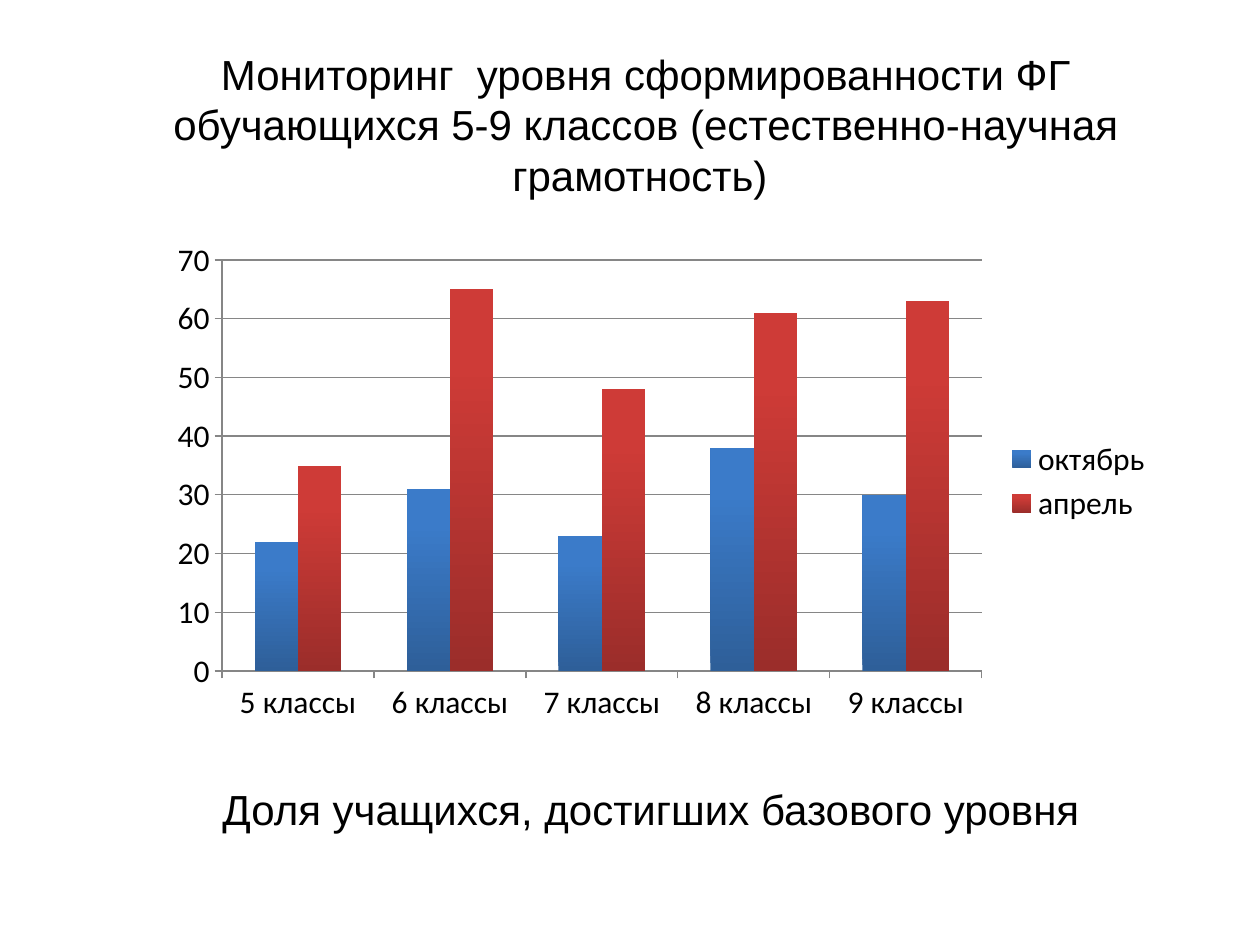
import dataclasses

import pptx
import pptx.chart.data
import pptx.dml.color
import pptx.enum.chart
import pptx.enum.text
import pptx.util

Pt = pptx.util.Pt
RGB = pptx.dml.color.RGBColor
BLACK = RGB(0, 0, 0)
GRAY = RGB(0x86, 0x86, 0x86)
BLUE, NAVY = RGB(0x3B, 0x7B, 0xC9), RGB(0x2E, 0x5F, 0x99)
RED, WINE = RGB(0xCE, 0x3B, 0x37), RGB(0x9B, 0x2D, 0x2A)


@dataclasses.dataclass
class Series:
    name: str
    values: tuple[int, ...]
    light: RGB
    dark: RGB


GRADES = [f"{grade} классы" for grade in range(5, 10)]
MONTHS = [
    Series("октябрь", (22, 31, 23, 38, 30), BLUE, NAVY),
    Series("апрель", (35, 65, 48, 61, 63), RED, WINE),
]


def place(shape, left: float, top: float, width: float, height: float) -> None:
    shape.left, shape.top = Pt(left), Pt(top)
    shape.width, shape.height = Pt(width), Pt(height)


def write(shape, text: str, *, size: float = 24, font: str = "Arial",
          color: RGB = BLACK) -> None:
    frame = shape.text_frame
    frame.word_wrap = True
    frame.auto_size = pptx.enum.text.MSO_AUTO_SIZE.NONE
    frame.vertical_anchor = pptx.enum.text.MSO_ANCHOR.TOP
    para = frame.paragraphs[0]
    para.alignment = pptx.enum.text.PP_ALIGN.CENTER
    run = para.add_run()
    run.text = text
    run.font.size, run.font.name = Pt(size), font
    run.font.color.rgb = color


def shade(fill, light: RGB, dark: RGB) -> None:
    """Fill with a gradient that runs from dark at the foot to light."""
    fill.gradient()
    fill.gradient_angle = 90
    for stop, color, pos in zip(fill.gradient_stops, (dark, light), (0, 0.8)):
        stop.color.rgb, stop.position = color, pos


def draw_chart(slide, months: list[Series]) -> None:
    kinds = pptx.enum.chart
    data = pptx.chart.data.CategoryChartData()
    data.categories = GRADES
    for month in months:
        data.add_series(month.name, month.values)
    chart = slide.shapes.add_chart(
        kinds.XL_CHART_TYPE.COLUMN_CLUSTERED,
        Pt(90), Pt(132), Pt(576), Pt(286), data).chart
    chart.has_title = False
    chart.font.size, chart.font.name = Pt(18), "Calibri"
    chart.font.color.rgb = BLACK

    # Columns
    plot = chart.plots[0]
    plot.gap_width, plot.overlap = 150, 0
    plot.vary_by_categories = False
    for series, month in zip(plot.series, months):
        shade(series.format.fill, month.light, month.dark)

    # Axes and grid
    scale = chart.value_axis
    scale.minimum_scale, scale.maximum_scale, scale.major_unit = 0, 70, 10
    scale.has_major_gridlines = True
    lines = [scale.major_gridlines.format.line]
    for axis in (chart.category_axis, scale):
        axis.major_tick_mark = kinds.XL_TICK_MARK.OUTSIDE
        axis.minor_tick_mark = kinds.XL_TICK_MARK.NONE
        lines.append(axis.format.line)
    for line in lines:
        line.color.rgb, line.width = GRAY, Pt(0.75)

    # Legend
    chart.has_legend = True
    chart.legend.position = kinds.XL_LEGEND_POSITION.RIGHT
    chart.legend.include_in_layout = False


def main() -> None:
    deck = pptx.Presentation()
    deck.slide_width, deck.slide_height = Pt(720), Pt(540)
    slide = deck.slides.add_slide(deck.slide_layouts[5])

    # Title
    title = slide.shapes.title
    place(title, 42, 24, 654, 94)
    write(title, "Мониторинг  уровня сформированности ФГ обучающихся "
                 "5-9 классов (естественно-научная грамотность) ")

    # Chart and its caption
    draw_chart(slide, MONTHS)
    note = slide.shapes.add_textbox(Pt(42), Pt(444), Pt(660), Pt(36))
    write(note, "Доля учащихся, достигших базового уровня")

    deck.save("out.pptx")


if __name__ == "__main__":
    main()
